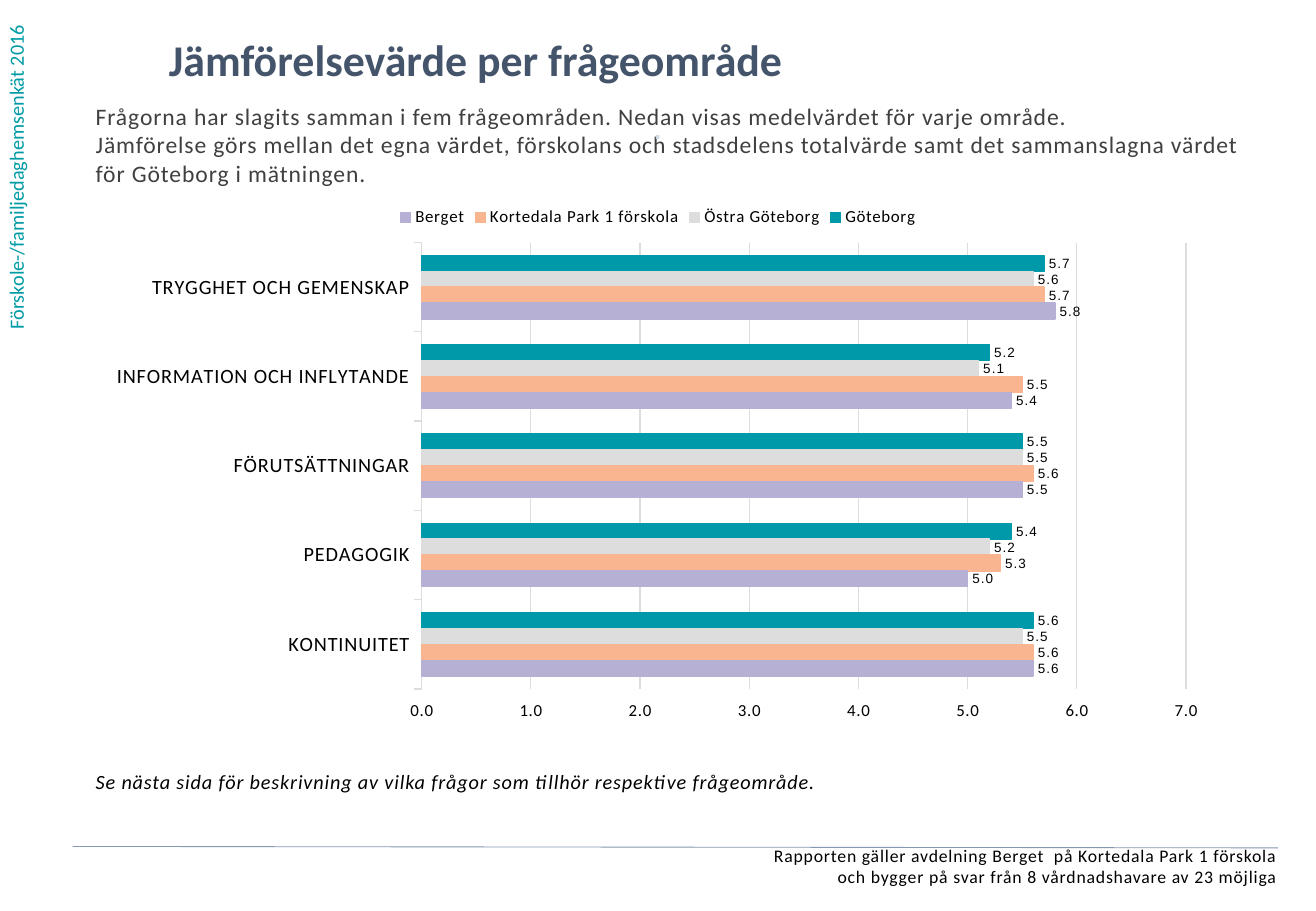
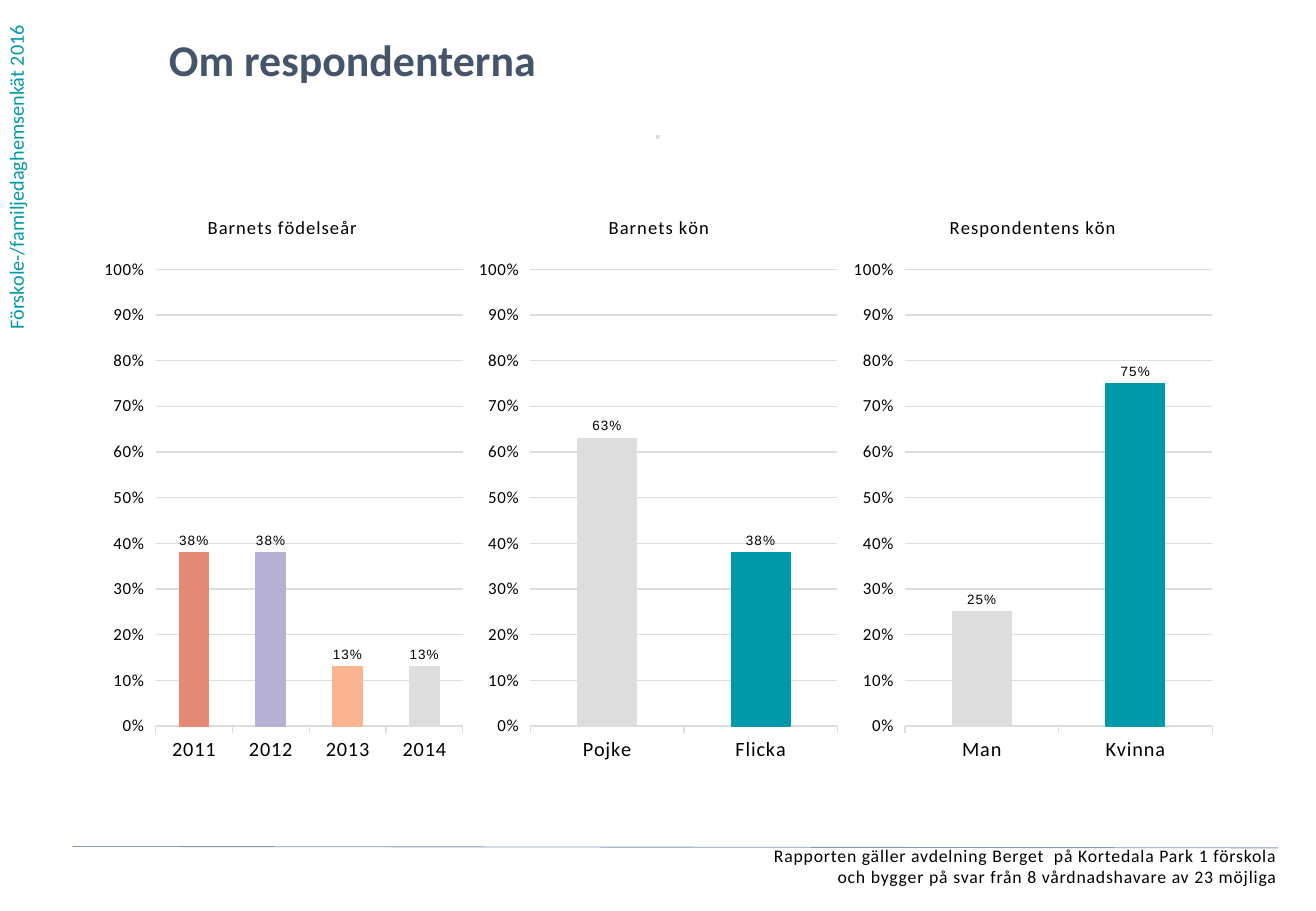
from lxml import etree
from pptx import Presentation
from pptx.chart.data import CategoryChartData
from pptx.dml.color import RGBColor
from pptx.enum.chart import (XL_CHART_TYPE, XL_LABEL_POSITION, XL_LEGEND_POSITION,
                             XL_TICK_LABEL_POSITION, XL_TICK_MARK)
from pptx.enum.shapes import MSO_CONNECTOR
from pptx.enum.text import MSO_ANCHOR, MSO_AUTO_SIZE, PP_ALIGN
from pptx.oxml.ns import qn
from pptx.util import Cm, Pt

BAR, COLUMN = XL_CHART_TYPE.BAR_CLUSTERED, XL_CHART_TYPE.COLUMN_CLUSTERED
TICK_LABELS_HIGH = XL_TICK_LABEL_POSITION.HIGH
TICK_OUT, TICK_NONE = XL_TICK_MARK.OUTSIDE, XL_TICK_MARK.NONE
LABEL_OUTSIDE = XL_LABEL_POSITION.OUTSIDE_END
LEGEND_TOP = XL_LEGEND_POSITION.TOP
STRAIGHT = MSO_CONNECTOR.STRAIGHT
TOP, NO_FIT = MSO_ANCHOR.TOP, MSO_AUTO_SIZE.NONE
LEFT, CENTER, RIGHT = PP_ALIGN.LEFT, PP_ALIGN.CENTER, PP_ALIGN.RIGHT

BLACK = RGBColor(0x00, 0x00, 0x00)
SLATE = RGBColor(0x44, 0x54, 0x6A)
CHARCOAL = RGBColor(0x40, 0x40, 0x40)
SIDE_TEAL = RGBColor(0x00, 0x9B, 0xA4)
PALE_BLUE = RGBColor(0xD2, 0xD9, 0xE2)
RULE_BLUE = RGBColor(0x84, 0x97, 0xB0)
TEAL = RGBColor(0x00, 0x99, 0xAA)
GREY = RGBColor(0xDD, 0xDD, 0xDD)
PEACH = RGBColor(0xF9, 0xB5, 0x90)
LILAC = RGBColor(0xB6, 0xB1, 0xD4)
CORAL = RGBColor(0xE5, 0x89, 0x77)

TRACKING = 50  # hundredths of a point
LEFT_EDGE, CHART_TOP, CONTENT_WIDTH = 2.0, 4.06, 23.5
BAR_CHART_HEIGHT, COLUMN_CHART_HEIGHT = 11.25, 12.09

SURVEY = "Förskole-/familjedaghemsenkät 2016"
FOOTER = ["Rapporten gäller avdelning Berget  på Kortedala Park 1 förskola",
          "och bygger på svar från 8 vårdnadshavare av 23 möjliga"]
AREAS_TITLE = "Jämförelsevärde per frågeområde"
AREAS_INTRO = [
    "Frågorna har slagits samman i fem frågeområden. Nedan visas medelvärdet för varje område.",
    "Jämförelse görs mellan det egna värdet, förskolans och stadsdelens totalvärde samt "
    "det sammanslagna värdet för Göteborg i mätningen.",
]
AREAS_NOTE = "Se nästa sida för beskrivning av vilka frågor som tillhör respektive frågeområde."
AREAS = ["TRYGGHET OCH GEMENSKAP", "INFORMATION OCH INFLYTANDE", "FÖRUTSÄTTNINGAR",
         "PEDAGOGIK", "KONTINUITET"]
AREA_SERIES = [
    ("Göteborg", [5.7, 5.2, 5.5, 5.4, 5.6], TEAL),
    ("Östra Göteborg", [5.6, 5.1, 5.5, 5.2, 5.5], GREY),
    ("Kortedala Park 1 förskola", [5.7, 5.5, 5.6, 5.3, 5.6], PEACH),
    ("Berget", [5.8, 5.4, 5.5, 5.0, 5.6], LILAC),
]
RESPONDENTS_TITLE = "Om respondenterna"
# title, left edge of the title as a share of the chart, (category, share, colour)
RESPONDENT_CHARTS = [
    ("Barnets födelseår", 0.29, [("2014", 0.13, GREY), ("2013", 0.13, PEACH),
                                 ("2012", 0.38, LILAC), ("2011", 0.38, CORAL)]),
    ("Barnets kön", 0.36, [("Flicka", 0.38, TEAL), ("Pojke", 0.63, GREY)]),
    ("Respondentens kön", 0.27, [("Kvinna", 0.75, TEAL), ("Man", 0.25, GREY)]),
]


def set_font(font, size, color, **formats):
    formats = {"name": "Calibri", "size": Pt(size), **formats}
    for name, value in formats.items():
        setattr(font, name, value)
    font.color.rgb = color


def set_tracking(element, tag):
    for properties in element.iter(qn(tag)):
        properties.set("spc", str(TRACKING))


def write(shape, box, lines, size, color, align=LEFT, tracked=True, flush=True, **formats):
    """Place a text shape and fill it with one paragraph per line."""
    shape.left, shape.top, shape.width, shape.height = map(Cm, box)
    frame = shape.text_frame
    frame.text = "\n".join(lines)
    frame.word_wrap, frame.auto_size, frame.vertical_anchor = True, NO_FIT, TOP
    if flush:
        for side in ("left", "top", "right", "bottom"):
            setattr(frame, f"margin_{side}", 0)
    for paragraph in frame.paragraphs:
        paragraph.alignment = align
        paragraph.space_before = Pt(0)
        for run in paragraph.runs:
            set_font(run.font, size, color, **formats)
    if tracked:
        set_tracking(shape.element, "a:rPr")
    return shape


def add_text(slide, box, *args, **formats):
    return write(slide.shapes.add_textbox(*map(Cm, box)), box, *args, **formats)


def add_report_slide(prs, layout_index, title):
    """Add a slide with the title, side text, dot, rule and footer of the report."""
    slide = prs.slides.add_slide(prs.slide_layouts[layout_index])
    side = add_text(slide, (-0.05, 0, 1.02, 7.14), [SURVEY], 12, SIDE_TEAL,
                    tracked=False, flush=False)
    side.element.find(".//" + qn("a:bodyPr")).set("vert", "vert270")
    write(slide.shapes.title, (3.53, 0.69, 21.18, 1.45), [title], 26, SLATE,
          tracked=False, bold=True)
    add_text(slide, (0.3, 17.66, 26.4, 1.09), FOOTER, 10.5, BLACK, align=RIGHT)
    add_text(slide, (9.84, 2.59, 7.82, 0.99), ["⋅"], 12, PALE_BLUE, align=CENTER, bold=True)
    rule = slide.shapes.add_connector(STRAIGHT, Cm(1.52), Cm(17.7), Cm(26.72), Cm(17.73))
    rule.line.color.rgb, rule.line.width = RULE_BLUE, Pt(0.5)
    etree.SubElement(rule.element.spPr, qn("a:effectLst"))
    return slide


def set_layout(parent, index, **shares):
    """Fix the place of a chart part, in shares of the chart's size."""
    for old in parent.findall(qn("c:layout")):
        parent.remove(old)
    layout = etree.Element(qn("c:layout"))
    manual = etree.SubElement(layout, qn("c:manualLayout"))
    if "w" in shares:
        etree.SubElement(manual, qn("c:layoutTarget")).set("val", "inner")
    for side in ("x", "y"):
        etree.SubElement(manual, qn(f"c:{side}Mode")).set("val", "edge")
    for side, share in shares.items():
        etree.SubElement(manual, qn(f"c:{side}")).set("val", str(share))
    parent.insert(index, layout)


def paint(part, color):
    part.format.fill.solid()
    part.format.fill.fore_color.rgb = color
    part.format.line.color.rgb, part.format.line.width = color, Pt(0.75)


def add_survey_chart(slide, kind, box, categories, series, number_format, maximum, unit, plot_area):
    data = CategoryChartData()
    data.categories = categories
    for name, values, _ in series:
        data.add_series(name, values)
    chart = slide.shapes.add_chart(kind, *map(Cm, box), data).chart
    chart.has_title = chart.has_legend = False
    set_font(chart.font, 10, BLACK)

    plot = chart.plots[0]
    plot.gap_width, plot.overlap, plot.vary_by_categories = 162, 0, False
    for drawn, (_, _, color) in zip(plot.series, series):
        paint(drawn, color)
        drawn.invert_if_negative = False
        labels = drawn.data_labels
        labels.show_value, labels.position = True, LABEL_OUTSIDE
        labels.number_format, labels.number_format_is_linked = number_format, False
        set_font(labels.font, 8, BLACK, name="Arial")

    category_axis, value_axis = chart.category_axis, chart.value_axis
    for axis, size in ((category_axis, 12), (value_axis, 10)):
        axis.major_tick_mark, axis.minor_tick_mark = TICK_OUT, TICK_NONE
        set_font(axis.tick_labels.font, size, BLACK)
    category_axis.reverse_order = True
    value_axis.tick_label_position = TICK_LABELS_HIGH
    value_axis.minimum_scale, value_axis.maximum_scale = 0, maximum
    value_axis.major_unit, value_axis.has_major_gridlines = unit, True
    value_axis.tick_labels.number_format = number_format
    value_axis.tick_labels.number_format_is_linked = False
    value_axis.format.line.fill.background()
    for line in (category_axis.format.line, value_axis.major_gridlines.format.line):
        line.color.rgb, line.width = GREY, Pt(0.75)

    set_tracking(chart.element, "a:defRPr")
    set_layout(chart.element.find(".//" + qn("c:plotArea")), 0, **plot_area)
    return chart


def build_areas(prs):
    slide = add_report_slide(prs, 1, AREAS_TITLE)
    intro = slide.placeholders[1]
    write(intro, (LEFT_EDGE, 2.13, 24.03, 2.57), AREAS_INTRO, 14, CHARCOAL)
    for paragraph in intro.element.iter(qn("a:p")):
        properties = paragraph.get_or_add_pPr()
        properties.set("marL", "0")
        properties.set("indent", "0")
        etree.SubElement(properties, qn("a:buNone"))
    add_text(slide, (LEFT_EDGE, 16.08, CONTENT_WIDTH, 0.7), [AREAS_NOTE], 12, BLACK, italic=True)
    chart = add_survey_chart(slide, BAR, (LEFT_EDGE, CHART_TOP, CONTENT_WIDTH, BAR_CHART_HEIGHT),
                             AREAS, AREA_SERIES, "0.0;0.0", 7, 1,
                             {"x": 0.29, "y": 0.09, "w": 0.68, "h": 0.83})
    chart.has_legend = True
    chart.legend.position, chart.legend.include_in_layout = LEGEND_TOP, False
    set_font(chart.legend.font, 10, BLACK)
    set_tracking(chart.element.find(".//" + qn("c:legend")), "a:defRPr")


def build_respondents(prs):
    slide = add_report_slide(prs, 5, RESPONDENTS_TITLE)
    width = CONTENT_WIDTH / len(RESPONDENT_CHARTS)
    for index, (title, title_x, answers) in enumerate(RESPONDENT_CHARTS):
        categories, shares, colors = zip(*answers)
        chart = add_survey_chart(
            slide, COLUMN, (LEFT_EDGE + index * width, CHART_TOP, width, COLUMN_CHART_HEIGHT),
            categories, [("Series 1", shares, TEAL)], "0%;0%", 1, 0.1,
            {"x": 0.16, "y": 0.13, "w": 0.82, "h": 0.79})
        for point, color in enumerate(colors):
            paint(chart.plots[0].series[0].points[point], color)
        heading = chart.chart_title.text_frame
        heading.text = title
        set_font(heading.paragraphs[0].runs[0].font, 11, BLACK, bold=False)
        heading_element = chart.element.find(".//" + qn("c:title"))
        set_tracking(heading_element, "a:rPr")
        set_layout(heading_element, 1, x=title_x, y=0.03)


def main():
    prs = Presentation()
    prs.slide_width, prs.slide_height = Cm(27.51), Cm(19.05)
    build_areas(prs)
    build_respondents(prs)
    prs.save("out.pptx")


if __name__ == "__main__":
    main()
